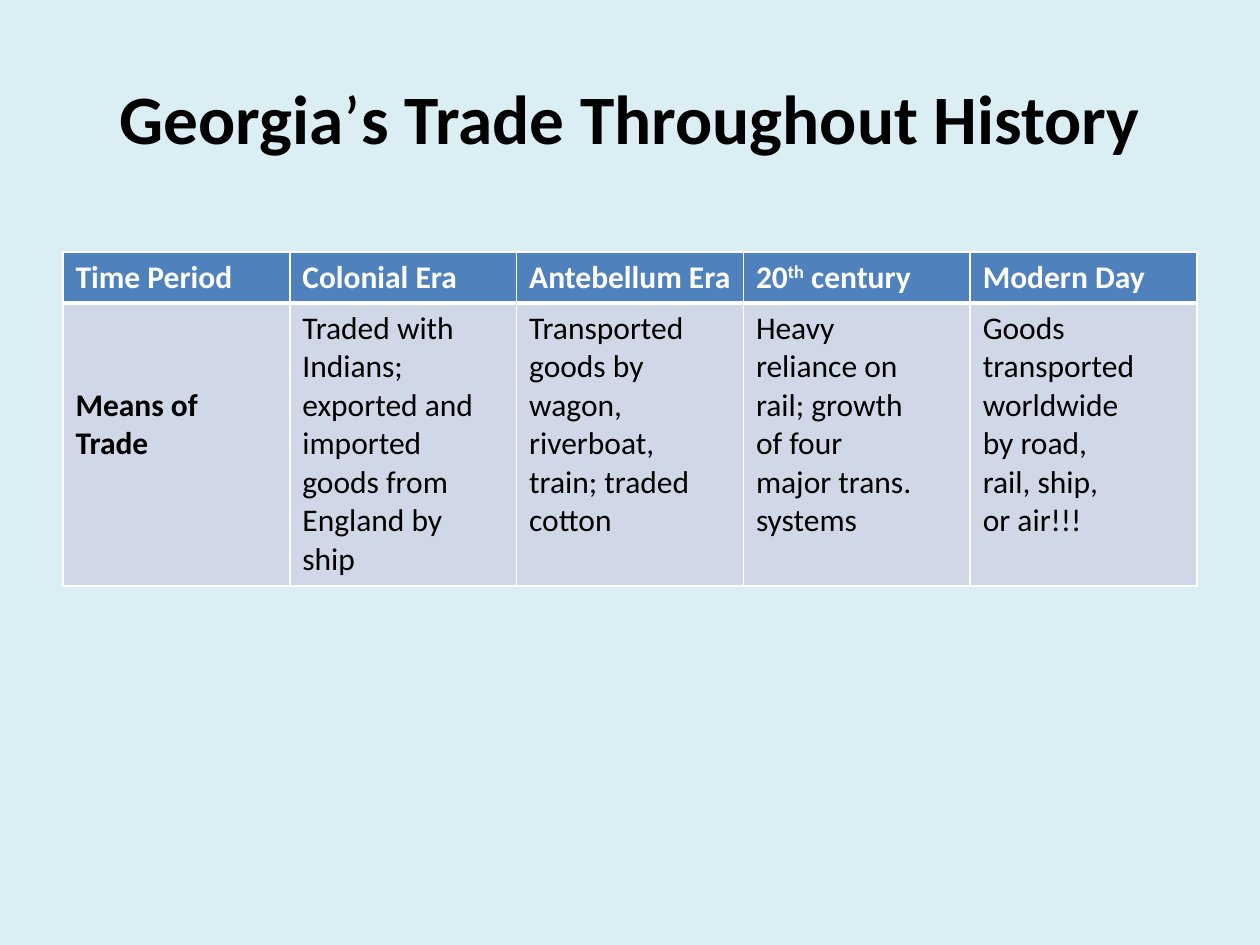
from lxml import etree
from pptx import Presentation
from pptx.dml.color import RGBColor
from pptx.enum.text import MSO_ANCHOR, PP_ALIGN
from pptx.oxml.ns import qn
from pptx.util import Pt

MIDDLE = MSO_ANCHOR.MIDDLE
CENTER = PP_ALIGN.CENTER

TITLE = [("Georgia", True), ("’", False), ("s Trade Throughout History", True)]
HEADERS = [["Time Period"], ["Colonial Era"], ["Antebellum Era"],
           ["20", "th", " century"], ["Modern Day"]]
SUPERSCRIPT = "th"
BODY = [
    ["Means of Trade"],
    ["Traded with", "Indians;", "exported and", "imported", "goods from",
     "England by", "ship"],
    ["Transported", "goods by", "wagon,", "riverboat,", "train; traded", "cotton"],
    ["Heavy", "reliance on", "rail; growth", "of four", "major trans.", "systems"],
    ["Goods", "transported", "worldwide", "by road,", "rail, ship,", "or air!!!"],
]
COLORS = {"background": "DBEEF4", "header": "4F81BD", "body": "D0D8E8",
          "light": "FFFFFF", "dark": "000000"}
FONT = "Calibri"
COL_WIDTH = 129.6
ROW_HEIGHTS = [29.2, 161.6]
LABEL_MARGIN_TOP = 47.5


def rgb(name):
    return RGBColor.from_string(COLORS[name])


def style_run(r, size, color, bold):
    r.font.name = FONT
    r.font.size = Pt(size)
    r.font.bold = bold
    r.font.color.rgb = rgb(color)


def set_borders(cell, widths):
    tc_pr = cell._tc.get_or_add_tcPr()
    for side, width in zip("LRTB", widths):
        ln = etree.SubElement(tc_pr, qn(f"a:ln{side}"), w=str(Pt(width)))
        fill = etree.SubElement(ln, qn("a:solidFill"))
        etree.SubElement(fill, qn("a:srgbClr"), val=COLORS["light"])


def style_cell(cell, fill, color, bold, widths):
    set_borders(cell, widths)
    cell.fill.solid()
    cell.fill.fore_color.rgb = rgb(fill)
    for p in cell.text_frame.paragraphs:
        for r in p.runs:
            style_run(r, 18, color, bold)


def add_title(s):
    title = s.shapes.title
    title.left, title.top, title.width, title.height = Pt(36), Pt(21.6), Pt(648), Pt(90)
    tf = title.text_frame
    tf.vertical_anchor = MIDDLE
    p = tf.paragraphs[0]
    p.alignment = CENTER
    for text, bold in TITLE:
        r = p.add_run()
        r.text = text
        style_run(r, 39.6, "dark", bold)


def add_trade_table(s):
    columns = len(HEADERS)
    table = s.shapes.add_table(2, columns, Pt(36), Pt(144), Pt(COL_WIDTH * columns),
                               Pt(sum(ROW_HEIGHTS))).table
    for row, height in zip(table.rows, ROW_HEIGHTS):
        row.height = Pt(height)
    for i, (header, lines) in enumerate(zip(HEADERS, BODY)):
        table.columns[i].width = Pt(COL_WIDTH)
        head, body = table.cell(0, i), table.cell(1, i)
        for text in header:
            r = head.text_frame.paragraphs[0].add_run()
            r.text = text
            if text == SUPERSCRIPT:
                r.font._element.set("baseline", "30000")
        style_cell(head, "header", "light", True, (1, 1, 1, 3))
        body.text_frame.text = "\n".join(lines)
        style_cell(body, "body", "dark", i == 0, (1, 1, 3, 1))
    table.cell(1, 0).margin_top = Pt(LABEL_MARGIN_TOP)


def main():
    prs = Presentation()
    prs.slide_width, prs.slide_height = Pt(720), Pt(540)
    s = prs.slides.add_slide(prs.slide_layouts[5])
    s.background.fill.solid()
    s.background.fill.fore_color.rgb = rgb("background")
    add_title(s)
    add_trade_table(s)
    prs.save("out.pptx")


if __name__ == "__main__":
    main()
